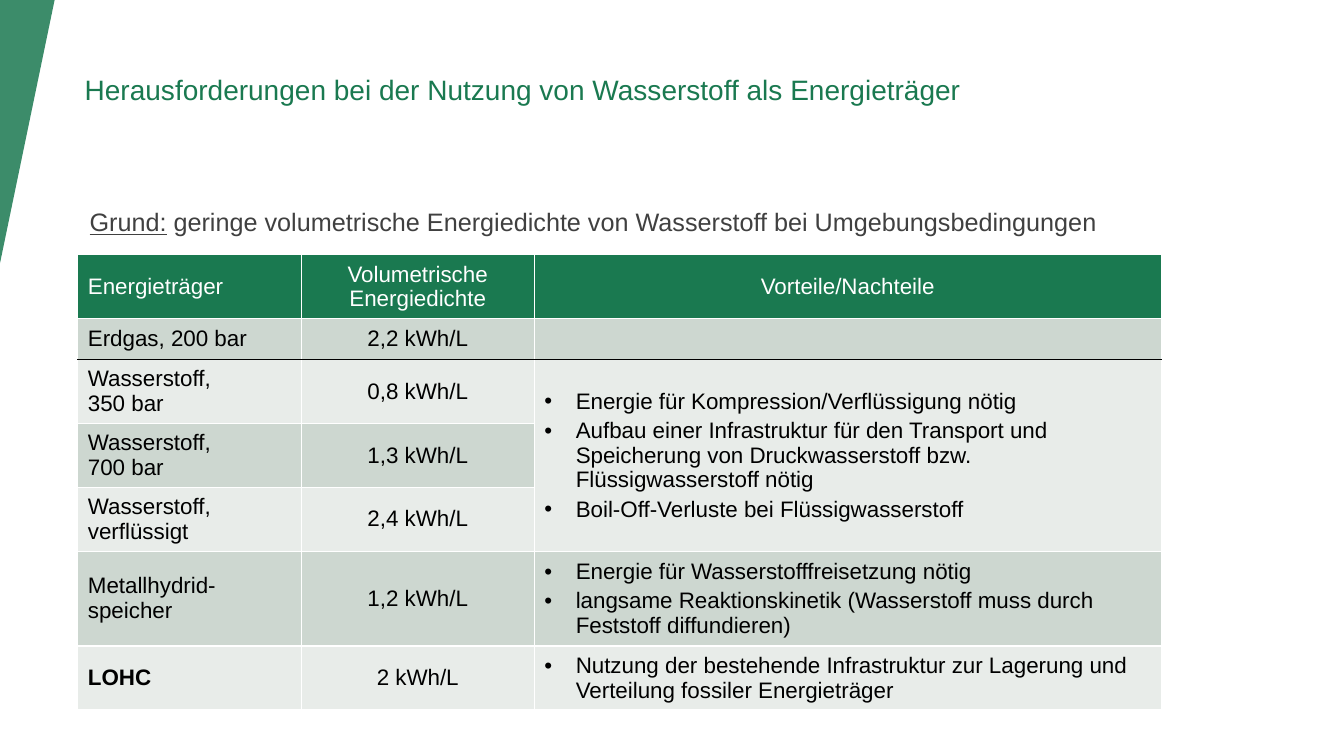
from lxml import etree
from pptx import Presentation
from pptx.dml.color import RGBColor
from pptx.enum.shapes import MSO_SHAPE
from pptx.enum.text import MSO_ANCHOR, MSO_AUTO_SIZE, PP_ALIGN
from pptx.oxml.ns import qn
from pptx.util import Pt

LEFT, CENTER = PP_ALIGN.LEFT, PP_ALIGN.CENTER
TOP, MIDDLE = MSO_ANCHOR.TOP, MSO_ANCHOR.MIDDLE
NO_AUTOFIT = MSO_AUTO_SIZE.NONE
TRIANGLE = MSO_SHAPE.ISOSCELES_TRIANGLE

FONT = "Arial"
COLORS = {
    "green": "1A7950",
    "dark_band": "CDD7D0",
    "light_band": "E8ECE9",
    "grey": "404040",
    "black": "000000",
    "white": "FFFFFF",
}
TITLE = "Herausforderungen bei der Nutzung von Wasserstoff als Energieträger"
REASON = ("Grund:", " geringe volumetrische Energiedichte von Wasserstoff bei Umgebungsbedingungen")

COLUMN_WIDTHS = [159.6, 166.4, 448]
ROW_HEIGHTS = [42.5, 29.2, 42.5, 42.5, 42.5, 63, 42.5]
ROWS = [
    ("Energieträger", "Volumetrische Energiedichte", "Vorteile/Nachteile"),
    ("Erdgas, 200 bar", "2,2 kWh/L", ""),
    ("Wasserstoff,\n350 bar", "0,8 kWh/L",
     "Energie für Kompression/Verflüssigung nötig\n"
     "Aufbau einer Infrastruktur für den Transport und Speicherung von "
     "Druckwasserstoff bzw. Flüssigwasserstoff nötig\n"
     "Boil-Off-Verluste bei Flüssigwasserstoff"),
    ("Wasserstoff,\n700 bar", "1,3 kWh/L", ""),
    ("Wasserstoff, verflüssigt", "2,4 kWh/L", ""),
    ("Metallhydrid-speicher", "1,2 kWh/L",
     "Energie für Wasserstofffreisetzung nötig\n"
     "langsame Reaktionskinetik (Wasserstoff muss durch Feststoff diffundieren)"),
    ("LOHC", "2 kWh/L",
     "Nutzung der bestehende Infrastruktur zur Lagerung und Verteilung fossiler Energieträger"),
]
GAS_ROW = 1
MERGED_ROWS = (2, 4)
LAST_ROW = len(ROWS) - 1


def rgb(name):
    return RGBColor.from_string(COLORS[name])


def style_font(font, size, color, bold=False):
    font.name = FONT
    font.size = Pt(size)
    font.bold = bold
    font.color.rgb = rgb(color)


def place(shape, left, top, width, height):
    shape.left, shape.top = Pt(left), Pt(top)
    shape.width, shape.height = Pt(width), Pt(height)


def add_corner(page):
    corner = page.shapes.add_shape(TRIANGLE, 0, 0, Pt(39), Pt(188))
    corner.adjustments[0] = 1
    corner.rotation = 180
    corner.shadow.inherit = False
    corner.line.fill.background()
    corner.fill.solid()
    corner.fill.fore_color.rgb = rgb("green")
    color = corner.fill._xPr.find(qn("a:solidFill"))[0]
    etree.SubElement(color, qn("a:alpha"), val="85000")


def set_title(page):
    title = page.shapes.title
    place(title, 53.3, 48.2, 676.8, 103.7)
    frame = title.text_frame
    frame.text = TITLE
    frame.auto_size = NO_AUTOFIT
    frame.vertical_anchor = TOP
    para = frame.paragraphs[0]
    para.alignment = LEFT
    style_font(para.runs[0].font, 20, "green")


def add_reason(page):
    box = page.shapes.add_textbox(Pt(56.9), Pt(144), Pt(774), Pt(30))
    frame = box.text_frame
    frame.word_wrap = True
    para = frame.paragraphs[0]
    for text, underlined in zip(REASON, (True, False)):
        span = para.add_run()
        span.text = text
        style_font(span.font, 18, "grey")
        span.font.underline = underlined


def set_border(cell, side, color):
    line = etree.SubElement(cell._tc.get_or_add_tcPr(), qn("a:" + side), w=str(Pt(1)))
    fill = etree.SubElement(line, qn("a:solidFill"))
    etree.SubElement(fill, qn("a:srgbClr"), val=COLORS[color])


def add_bullet(para):
    properties = para._p.get_or_add_pPr()
    properties.set("marL", str(Pt(22.5)))
    properties.set("indent", str(Pt(-22.5)))
    etree.SubElement(properties, qn("a:buFont"), typeface=FONT)
    etree.SubElement(properties, qn("a:buChar"), char="•")


def format_cell(cell, row, column, text):
    # Borders come before the fill in the cell properties
    for side in ("lnL", "lnR", "lnT", "lnB"):
        under_gas = (row, side) in ((GAS_ROW, "lnB"), (GAS_ROW + 1, "lnT"))
        set_border(cell, side, "black" if under_gas else "white")
    cell.fill.solid()
    band = "dark_band" if row % 2 else "light_band"
    cell.fill.fore_color.rgb = rgb(band if row else "green")

    # Text
    cell.vertical_anchor = MIDDLE
    cell.text_frame.text = text
    bulleted = row > GAS_ROW and column == 2
    for para in cell.text_frame.paragraphs:
        if bulleted and text:
            add_bullet(para)
            para.space_after = Pt(0 if row == LAST_ROW else 3)
        para.alignment = CENTER if column and not bulleted else LEFT
        for span in para.runs:
            style_font(span.font, 16, "black" if row else "white",
                       bold=row == LAST_ROW and column == 0)


def add_energy_table(page):
    frame = page.shapes.add_table(len(ROWS), len(COLUMN_WIDTHS), Pt(55.6), Pt(182),
                                  Pt(sum(COLUMN_WIDTHS)), Pt(sum(ROW_HEIGHTS)))
    table = frame.table
    for column, width in zip(table.columns, COLUMN_WIDTHS):
        column.width = Pt(width)
    for row, height in zip(table.rows, ROW_HEIGHTS):
        row.height = Pt(height)
    for row, texts in enumerate(ROWS):
        for column, text in enumerate(texts):
            format_cell(table.cell(row, column), row, column, text)
    first, last = MERGED_ROWS
    table.cell(first, 2).merge(table.cell(last, 2))


def main():
    deck = Presentation()
    deck.slide_width, deck.slide_height = Pt(960), Pt(540)
    page = deck.slides.add_slide(deck.slide_layouts[5])
    add_corner(page)
    set_title(page)
    add_reason(page)
    add_energy_table(page)
    deck.save("out.pptx")


if __name__ == "__main__":
    main()
